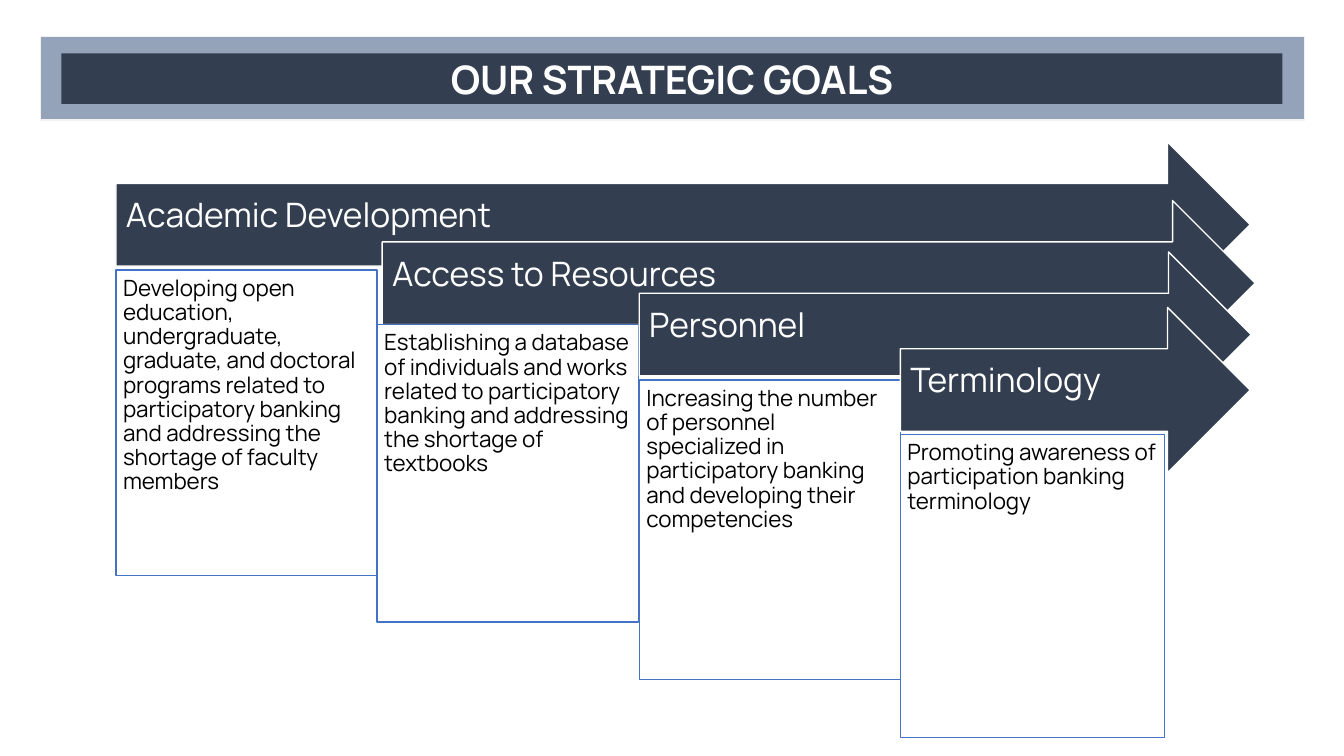
import pptx
import pptx.dml.color
import pptx.enum.shapes
import pptx.enum.text
import pptx.util

Inches = pptx.util.Inches
Pt = pptx.util.Pt
SHAPE = pptx.enum.shapes.MSO_SHAPE
ANCHOR = pptx.enum.text.MSO_ANCHOR
ALIGN = pptx.enum.text.PP_ALIGN

COLORS = {
    "navy": "333F50",
    "band": "94A3BA",
    "band_edge": "F2F2F2",
    "blue": "4472C4",
    "white": "FFFFFF",
    "black": "000000",
}
FONT = "Manrope"
ARROW_HEIGHT = 1.64

GOALS = [
    ("Academic Development",
     "Developing open education, undergraduate, graduate, and doctoral programs "
     "related to participatory banking and addressing the shortage of faculty members",
     (1.15, 1.41, 11.25), (1.15, 2.68, 2.59, 3.03)),
    ("Access to Resources",
     "Establishing a database of individuals and works related to participatory "
     "banking and addressing the shortage of textbooks",
     (3.79, 1.99, 8.66), (3.74, 3.22, 2.59, 2.95)),
    ("Personnel",
     "Increasing the number of personnel specialized in participatory banking "
     "and developing their competencies",
     (6.34, 2.5, 6.07), (6.34, 3.77, 2.59, 2.97)),
    ("Terminology",
     "Promoting awareness of participation banking terminology",
     (8.93, 3.05, 3.47), (8.93, 4.31, 2.62, 3.01)),
]


def rgb(name):
    return pptx.dml.color.RGBColor.from_string(COLORS[name])


def write_text(shape, text, size, color, bold=False, align=ALIGN.LEFT,
               anchor=ANCHOR.TOP, insets=(0.1, 0.05, 0.1, 0.05), spacing=0.9):
    frame = shape.text_frame
    frame.word_wrap = True
    frame.auto_size = pptx.enum.text.MSO_AUTO_SIZE.NONE
    frame.vertical_anchor = anchor
    (frame.margin_left, frame.margin_top,
     frame.margin_right, frame.margin_bottom) = map(Inches, insets)
    paragraph = frame.paragraphs[0]
    paragraph.alignment = align
    paragraph.line_spacing = spacing
    run = paragraph.add_run()
    run.text = text
    run.font.name = FONT
    run.font.size = Pt(size)
    run.font.bold = bold
    run.font.color.rgb = rgb(color)


def add_panel(slide, kind, place, fill, line):
    panel = slide.shapes.add_shape(kind, *map(Inches, place))
    panel.shadow.inherit = False
    panel.fill.solid()
    panel.fill.fore_color.rgb = rgb(fill)
    panel.line.color.rgb = rgb(line)
    panel.line.width = Pt(1)
    return panel


def add_heading(slide, text):
    add_panel(slide, SHAPE.RECTANGLE, (0.4, 0.36, 12.54, 0.83), "band", "band_edge")
    title = slide.shapes.title
    title.left, title.top, title.width, title.height = map(
        Inches, (0.61, 0.53, 12.11, 0.5))
    title.fill.solid()
    title.fill.fore_color.rgb = rgb("navy")
    write_text(title, text, 28, "white", bold=True, align=ALIGN.CENTER,
               anchor=ANCHOR.MIDDLE, spacing=1.0)
    slide.shapes._spTree.append(title._element)


def add_goal(slide, name, detail, arrow_place, detail_place):
    arrow = add_panel(slide, SHAPE.RIGHT_ARROW, (*arrow_place, ARROW_HEIGHT),
                      "navy", "white")
    write_text(arrow, name, 24, "white", anchor=ANCHOR.MIDDLE,
               insets=(0.1, 0.1, 0.28, 0.26))
    box = add_panel(slide, SHAPE.RECTANGLE, detail_place, "white", "blue")
    write_text(box, detail, 16, "black", insets=(0.07, 0.07, 0.07, 0.07))


def main():
    deck = pptx.Presentation()
    deck.slide_width = Inches(13.33)
    deck.slide_height = Inches(7.5)
    slide = deck.slides.add_slide(deck.slide_layouts[5])
    add_heading(slide, "OUR STRATEGIC GOALS")
    for goal in GOALS:
        add_goal(slide, *goal)
    deck.save("out.pptx")


if __name__ == "__main__":
    main()
